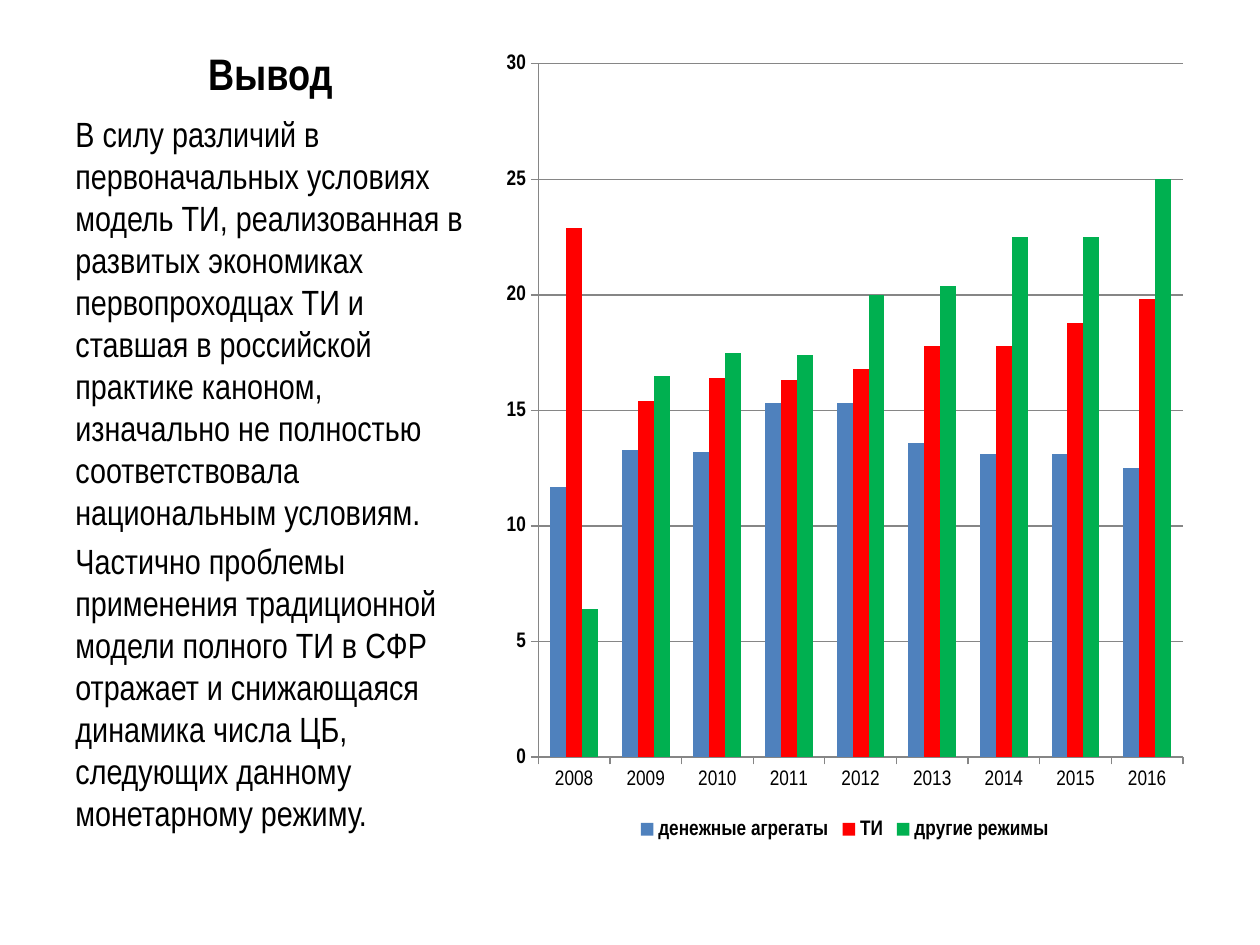
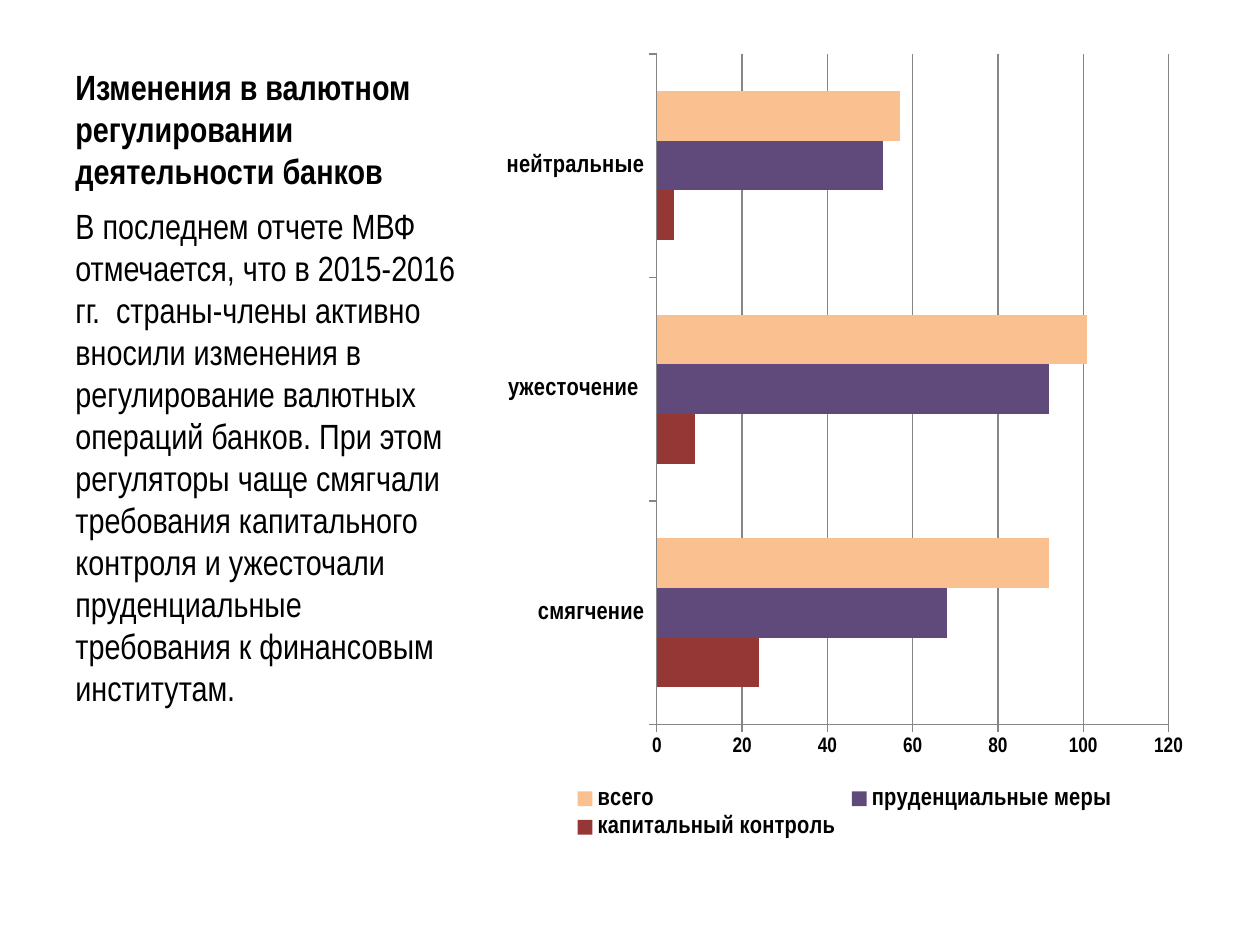
from dataclasses import dataclass

from pptx import Presentation
from pptx.chart.data import CategoryChartData
from pptx.dml.color import RGBColor
from pptx.enum.chart import XL_CHART_TYPE, XL_LEGEND_POSITION, XL_TICK_MARK
from pptx.enum.text import MSO_ANCHOR, PP_ALIGN
from pptx.util import Inches, Pt

COLUMN = XL_CHART_TYPE.COLUMN_CLUSTERED
BAR = XL_CHART_TYPE.BAR_CLUSTERED
BOTTOM = XL_LEGEND_POSITION.BOTTOM
OUT, NONE = XL_TICK_MARK.OUTSIDE, XL_TICK_MARK.NONE
TOP, LOW = MSO_ANCHOR.TOP, MSO_ANCHOR.BOTTOM
LEFT, CENTER = PP_ALIGN.LEFT, PP_ALIGN.CENTER


@dataclass(frozen=True)
class Theme:
    font: str = "Arial Narrow"
    base: str = "Calibri"
    ink: str = "000000"
    grid: str = "868686"
    paper: str = "FFFFFF"
    body: float = 20
    chart: float = 10
    scale: float = 12
    gap: float = 4


@dataclass(frozen=True)
class Series:
    name: str
    color: str
    vals: tuple


@dataclass(frozen=True)
class Graph:
    kind: int
    cats: tuple
    series: tuple
    cat_size: float
    cat_bold: bool
    legend: float
    top: float  # value axis maximum
    step: float


@dataclass(frozen=True)
class Page:
    title: str
    size: float
    align: int
    height: float  # title height, inches
    paras: tuple
    graph: Graph


THEME = Theme()

# Shared layout, inches: text column on the left, chart on the right
EDGE, HEAD, FOOT = 0.5, 0.3, 6.7
TEXT_W, CHART_X, CHART_W = 3.29, 3.91, 5.59

PAGES = (
    Page(
        "Вывод", 25.2, CENTER, 0.54,
        (
            "В силу различий в первоначальных условиях модель ТИ, реализованная "
            "в развитых экономиках первопроходцах ТИ и ставшая в российской "
            "практике каноном, изначально не полностью соответствовала "
            "национальным условиям.",
            "Частично проблемы применения традиционной модели полного ТИ в СФР "
            "отражает и снижающаяся динамика числа ЦБ, следующих данному "
            "монетарному режиму.",
        ),
        Graph(
            COLUMN, tuple(str(year) for year in range(2008, 2017)),
            (
                Series("денежные агрегаты", "4F81BD",
                       (11.7, 13.3, 13.2, 15.3, 15.3, 13.6, 13.1, 13.1, 12.5)),
                Series("ТИ", "FF0000",
                       (22.9, 15.4, 16.4, 16.3, 16.8, 17.8, 17.8, 18.8, 19.8)),
                Series("другие режимы", "00B050",
                       (6.4, 16.5, 17.5, 17.4, 20, 20.4, 22.5, 22.5, 25)),
            ),
            cat_size=12, cat_bold=False, legend=12, top=30, step=5,
        ),
    ),
    Page(
        "Изменения в валютном регулировании деятельности банков",
        20, LEFT, 1.27,
        (
            "В последнем отчете МВФ отмечается, что в 2015-2016 гг.  "
            "страны-члены активно вносили изменения в регулирование валютных "
            "операций банков. При этом регуляторы чаще смягчали требования "
            "капитального контроля и ужесточали пруденциальные требования к "
            "финансовым институтам.",
        ),
        Graph(
            BAR, ("смягчение", "ужесточение ", "нейтральные"),
            (
                Series("капитальный контроль", "953735", (24, 9, 4)),
                Series("пруденциальные меры", "604A7B", (68, 92, 53)),
                Series("всего", "FAC090", (92, 101, 57)),
            ),
            cat_size=14, cat_bold=True, legend=14, top=120, step=20,
        ),
    ),
)


def style(font, size: float, bold: bool = False, name: str = THEME.font) -> None:
    font.name, font.size, font.bold = name, Pt(size), bold
    font.color.rgb = RGBColor.from_string(THEME.ink)


def add_text(slide, top: float, height: float, paras: tuple, size: float,
             bold: bool = False, align: int = LEFT, anchor: int = TOP,
             gap: float = 0) -> None:
    box = slide.shapes.add_textbox(
        Inches(EDGE), Inches(top), Inches(TEXT_W), Inches(height))
    frame = box.text_frame
    frame.word_wrap = True
    frame.vertical_anchor = anchor
    frame.text = "\n".join(paras)
    for para in frame.paragraphs:
        para.alignment = align
        para.space_before = Pt(gap)
        for run in para.runs:
            style(run.font, size, bold)


def set_line(line) -> None:
    line.color.rgb = RGBColor.from_string(THEME.grid)
    line.width = Pt(0.75)


def set_axis(axis, size: float, bold: bool) -> None:
    axis.major_tick_mark, axis.minor_tick_mark = OUT, NONE
    style(axis.tick_labels.font, size, bold)
    set_line(axis.format.line)


def add_graph(slide, graph: Graph) -> None:
    data = CategoryChartData()
    data.categories = graph.cats
    for item in graph.series:
        data.add_series(item.name, item.vals)
    chart = slide.shapes.add_chart(
        graph.kind, Inches(CHART_X), Inches(HEAD),
        Inches(CHART_W), Inches(FOOT - HEAD), data).chart
    chart.has_title = False
    style(chart.font, THEME.chart, name=THEME.base)

    # Bars
    plot = chart.plots[0]
    plot.gap_width, plot.overlap = 150, 0
    plot.vary_by_categories = False
    for bars, item in zip(plot.series, graph.series):
        bars.invert_if_negative = False
        bars.format.fill.solid()
        bars.format.fill.fore_color.rgb = RGBColor.from_string(item.color)

    # Axes and grid
    set_axis(chart.category_axis, graph.cat_size, graph.cat_bold)
    scale = chart.value_axis
    set_axis(scale, THEME.scale, True)
    scale.minimum_scale, scale.maximum_scale = 0, graph.top
    scale.major_unit = graph.step
    scale.has_major_gridlines = True
    set_line(scale.major_gridlines.format.line)

    # Legend
    chart.has_legend = True
    chart.legend.position = BOTTOM
    chart.legend.include_in_layout = False
    style(chart.legend.font, graph.legend, True)


def add_page(deck, page: Page) -> None:
    slide = deck.slides.add_slide(deck.slide_layouts[6])
    slide.background.fill.solid()
    slide.background.fill.fore_color.rgb = RGBColor.from_string(THEME.paper)
    add_text(slide, HEAD, page.height, (page.title,), page.size,
             bold=True, align=page.align, anchor=LOW)
    top = HEAD + page.height
    add_text(slide, top, FOOT - top, page.paras, THEME.body, gap=THEME.gap)
    add_graph(slide, page.graph)


def main() -> None:
    deck = Presentation()
    deck.slide_width, deck.slide_height = Inches(10), Inches(7.5)
    for page in PAGES:
        add_page(deck, page)
    deck.save("out.pptx")


if __name__ == "__main__":
    main()
